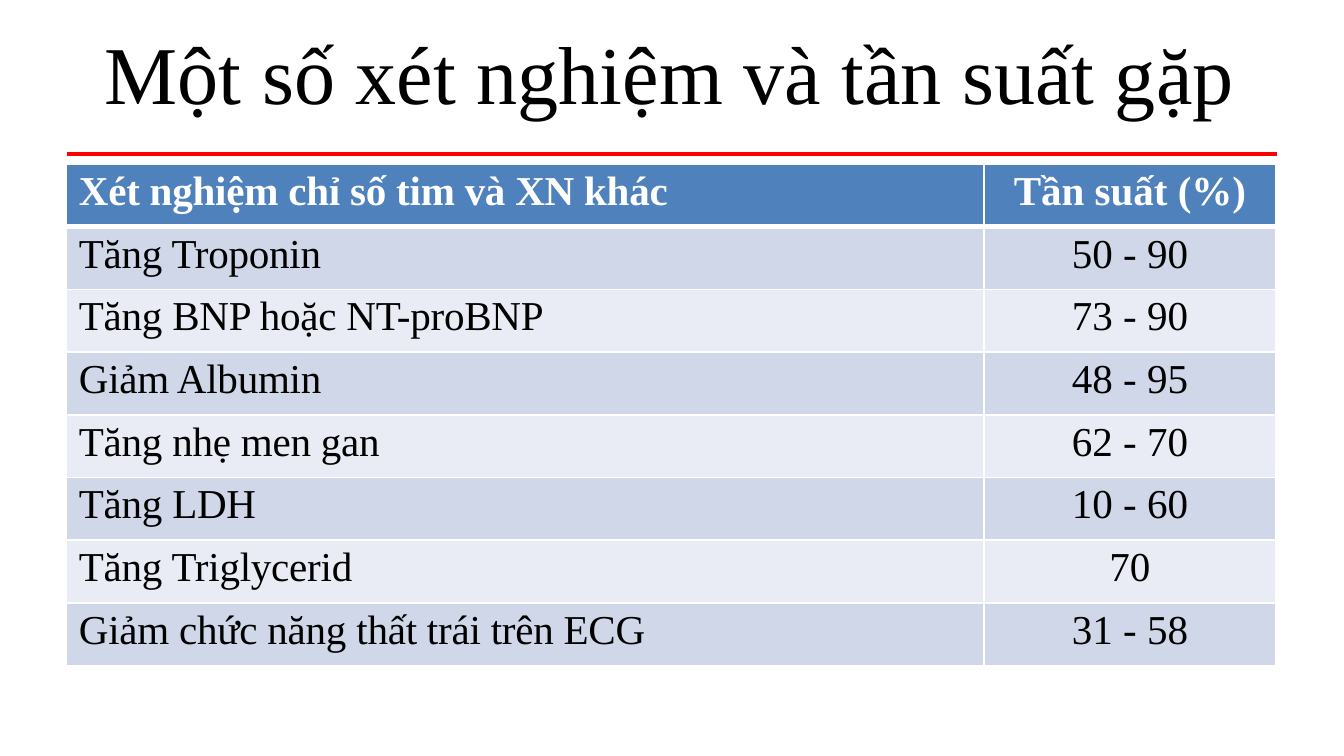
"""Build a slide with a table of laboratory tests and how often they are abnormal."""
from lxml.etree import SubElement
from pptx import Presentation
from pptx.dml.color import RGBColor
from pptx.enum.shapes import MSO_CONNECTOR as Connector
from pptx.enum.text import PP_ALIGN as Align
from pptx.oxml.ns import qn
from pptx.util import Pt

PX = 914400 / 134.4
HEADER_FILL = "4F81BC"
BAND_FILLS = ["D0D7E8", "E9ECF4"]
ROWS = [
    ("Xét nghiệm chỉ số tim và XN khác", "Tần suất (%)"),
    ("Tăng Troponin", "50 - 90"),
    ("Tăng BNP hoặc NT-proBNP", "73 - 90"),
    ("Giảm Albumin", "48 - 95"),
    ("Tăng nhẹ men gan", "62 - 70"),
    ("Tăng LDH", "10 - 60"),
    ("Tăng Triglycerid", "70"),
    ("Giảm chức năng thất trái trên ECG", "31 - 58"),
]


def px(*lengths):
    return [round(length * PX) for length in lengths]


def write(frame, text, size=22, color="000000", bold=False, align=Align.LEFT, before=2.9, spacing=0):
    paragraph = frame.paragraphs[0]
    paragraph.alignment = align
    paragraph.space_before = Pt(before)
    run = paragraph.add_run()
    run.text = text
    run.font.name = "Times New Roman"
    run.font.size = Pt(size)
    run.font.bold = bold
    run.font.color.rgb = RGBColor.from_string(color)
    run.font._element.set("spc", str(spacing))


presentation = Presentation()
presentation.slide_width, presentation.slide_height = px(1344, 756)
slide = presentation.slides.add_slide(presentation.slide_layouts[6])

title = slide.shapes.add_textbox(*px(105, 21, 1133, 102)).text_frame
title.margin_left = title.margin_right = title.margin_bottom = 0
title.margin_top = px(1)[0]
title.word_wrap = False
write(title, "Một số xét nghiệm và tần suất gặp", size=44, before=1.1)

table = slide.shapes.add_table(len(ROWS), 2, *px(66, 164, 1210, 502)).table
for column, width in zip(table.columns, px(918, 292)):
    column.width = width

for row, texts in enumerate(ROWS):
    header = row == 0
    fill = HEADER_FILL if header else BAND_FILLS[(row - 1) % 2]
    for column, text in enumerate(texts):
        cell = table.cell(row, column)
        cell.margin_left, cell.margin_right = px(13 if column == 0 else 0, 0)
        cell.margin_top, cell.margin_bottom = px(5, 0)
        write(cell.text_frame, text, color="FFFFFF" if header else "000000", bold=header,
              align=Align.CENTER if column else Align.LEFT, spacing=0 if column else -10)
        properties = cell._tc.get_or_add_tcPr()
        for side in "LRTB":
            thick = (row, side) in [(0, "B"), (1, "T")]
            border = SubElement(properties, qn(f"a:ln{side}"), w=str(Pt(3 if thick else 1)))
            SubElement(SubElement(border, qn("a:solidFill")), qn("a:srgbClr"), val="FFFFFF")
        cell.fill.solid()
        cell.fill.fore_color.rgb = RGBColor.from_string(fill)

rule = slide.shapes.add_connector(Connector.STRAIGHT, *px(67, 154, 1277, 154))
rule.line.color.rgb = RGBColor.from_string("FF0000")
rule.line.width = Pt(2.25)
SubElement(rule._element.spPr, qn("a:effectLst"))

presentation.save("out.pptx")
